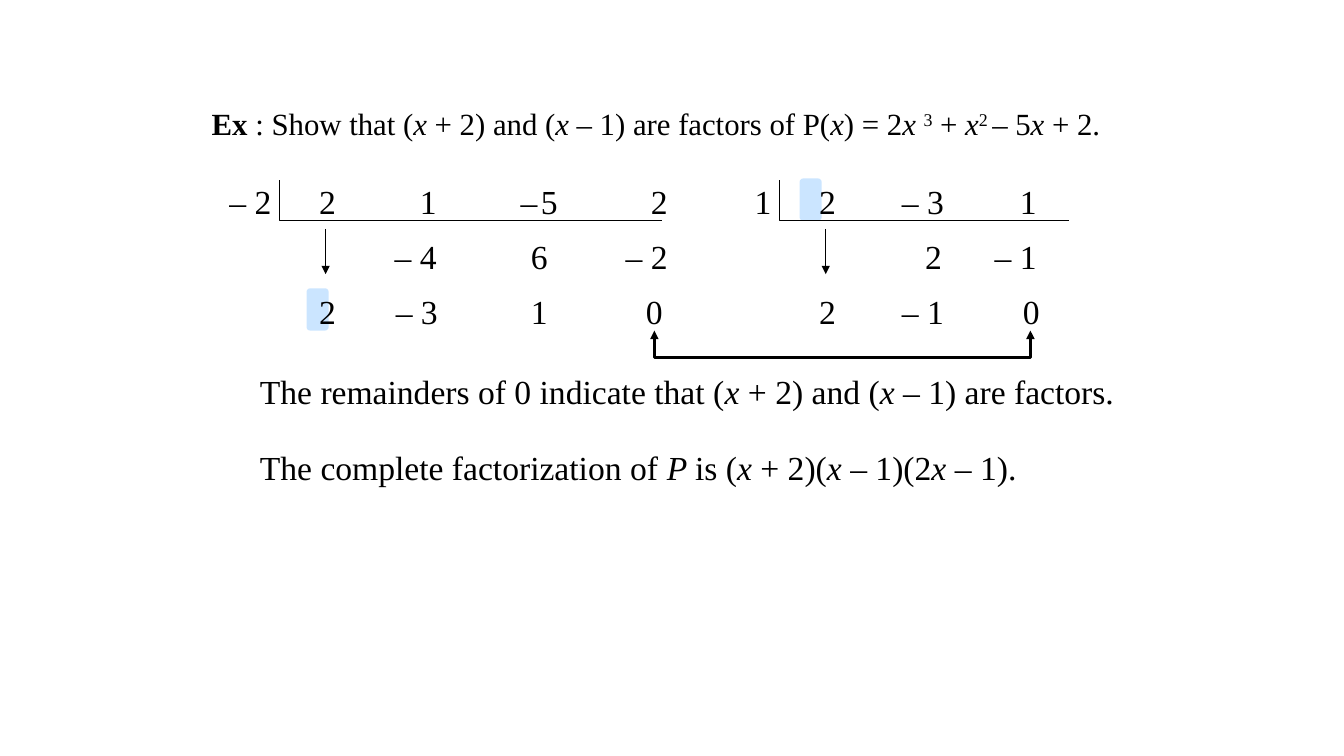
import pptx
import pptx.util
import pptx.dml.color
import pptx.enum.shapes
import pptx.enum.text
import pptx.oxml
import pptx.oxml.ns
from lxml import etree

Inches = pptx.util.Inches
Pt = pptx.util.Pt
ALIGN = pptx.enum.text.PP_ALIGN

QUESTION = [("Ex ", "bold"), (": Show that (", ""), ("x", "italic"), (" + 2) and (", ""),
            ("x", "italic"), (" – 1) are factors of P(", ""), ("x", "italic"), (") = 2", ""),
            ("x ", "italic"), ("3", "power"), (" + ", ""), ("x", "italic"), ("2 ", "power"),
            ("– 5", ""), ("x", "italic"), (" + 2.", "")]
CONCLUSIONS = [
    (3.55, [("The remainders of 0 indicate that (", ""), ("x", "italic"), (" + 2) and (", ""),
            ("x", "italic"), (" – 1) are factors.", "")]),
    (4.3, [("The complete factorization of ", ""), ("P ", "italic"), ("is (", ""),
           ("x", "italic"), (" + 2)(", ""), ("x", "italic"), (" – 1)(2", ""),
           ("x ", "italic"), ("– 1).", "")]),
]
MINUS_FIVE = [("–", ""), (" ", "thin"), ("5", "")]
DIVISIONS = [
    {"divisor": ("– 2", 2.69), "corner": 2.77, "rule_end": 6.57, "arrow": 3.23,
     "rows": [[("2", 3.33), ("1", 4.33), (MINUS_FIVE, 5.53), ("2", 6.62)],
              [("– 4", 4.33), ("6", 5.43), ("– 2", 6.62)],
              [("2", 3.33), ("– 3", 4.34), ("1", 5.43), ("0", 6.57)]]},
    {"divisor": ("1", 7.65), "corner": 7.73, "rule_end": 10.6, "arrow": 8.19,
     "rows": [[("2", 8.29), ("– 3", 9.36), ("1", 10.28)],
              [("2", 9.34), ("– 1", 10.28)],
              [("2", 8.29), ("– 1", 9.36), ("0", 10.31)]]},
]
HIGHLIGHTS = [(7.93, 1.77), (3.04, 2.86)]
REMAINDER_LINK = [(6.49, 3.28), (6.49, 3.55), (10.22, 3.55), (10.22, 3.28)]

THEME = {"font": "Times New Roman", "ink": "000000", "highlight": "99CCFF",
         "question": 22, "body": 24, "thin": 10, "line": 1, "link": 2}
ROW_TOP, ROW_STEP, LINE_HEIGHT = 1.67, 0.545, 0.54
NUMBER_WIDTH, INSET = 0.75, 0.1
BRACKET_TOP, BRACKET_BASE = 1.79, 2.19
ARROW_TOP, ARROW_TIP = 2.27, 2.72


def color(key):
    return pptx.dml.color.RGBColor.from_string(THEME[key])


def write(frame, pieces, size, align=ALIGN.LEFT):
    frame.word_wrap = True
    frame.auto_size = pptx.enum.text.MSO_AUTO_SIZE.NONE
    frame.vertical_anchor = pptx.enum.text.MSO_ANCHOR.TOP
    paragraph = frame.paragraphs[0]
    paragraph.alignment = align
    paragraph.line_spacing = 1.2
    paragraph.space_before = Pt(0)
    for text, style in pieces:
        run = paragraph.add_run()
        run.text = text
        font = run.font
        font.name = THEME["font"]
        font.size = Pt(THEME["thin"] if style == "thin" else size)
        font.color.rgb = color("ink")
        font.bold = style == "bold"
        font.italic = style == "italic"
        if style == "power":
            run._r.get_or_add_rPr().set("baseline", "30000")


def add_text(slide, left, top, width, pieces, align=ALIGN.LEFT):
    box = slide.shapes.add_textbox(Inches(left), Inches(top), Inches(width), Inches(LINE_HEIGHT))
    write(box.text_frame, pieces, THEME["body"], align)


def add_number(slide, number, right, row):
    pieces = [(number, "")] if isinstance(number, str) else number
    add_text(slide, right + INSET - NUMBER_WIDTH, ROW_TOP + row * ROW_STEP,
             NUMBER_WIDTH, pieces, ALIGN.RIGHT)


def style_line(shape, weight, arrowheads=()):
    shape.line.color.rgb = color("ink")
    shape.line.width = Pt(weight)
    for end in arrowheads:
        etree.SubElement(shape.line._get_or_add_ln(), pptx.oxml.ns.qn("a:" + end), type="triangle")


def add_path(slide, points, weight, arrowheads=()):
    corners = [(Inches(x), Inches(y)) for x, y in points]
    builder = slide.shapes.build_freeform(*corners[0])
    builder.add_line_segments(corners[1:], close=False)
    outline = builder.convert_to_shape()
    outline.shadow.inherit = False
    outline.fill.background()
    style_line(outline, weight, arrowheads)


def add_highlight(slide, left, top):
    mark = slide.shapes.add_shape(pptx.enum.shapes.MSO_SHAPE.ROUNDED_RECTANGLE,
                                  Inches(left), Inches(top), Inches(0.22), Inches(0.42))
    mark.shadow.inherit = False
    mark.line.fill.background()
    mark.fill.solid()
    mark.fill.fore_color.rgb = color("highlight")
    tint = mark._element.spPr.find(".//" + pptx.oxml.ns.qn("a:srgbClr"))
    etree.SubElement(tint, pptx.oxml.ns.qn("a:alpha"), val="50000")


def add_division(slide, division):
    corner, rule_end, x = division["corner"], division["rule_end"], division["arrow"]
    add_path(slide, [(corner, BRACKET_TOP), (corner, BRACKET_BASE), (rule_end, BRACKET_BASE)],
             THEME["line"])
    arrow = slide.shapes.add_connector(pptx.enum.shapes.MSO_CONNECTOR.STRAIGHT, Inches(x),
                                       Inches(ARROW_TOP), Inches(x), Inches(ARROW_TIP))
    style_line(arrow, THEME["line"], ["tailEnd"])
    etree.SubElement(arrow._element.spPr, pptx.oxml.ns.qn("a:effectLst"))
    add_number(slide, *division["divisor"], 0)
    for row, numbers in enumerate(division["rows"]):
        for number, right in numbers:
            add_number(slide, number, right, row)


def main():
    deck = pptx.Presentation()
    deck.slide_width, deck.slide_height = Inches(13.33), Inches(7.5)
    slide = deck.slides.add_slide(deck.slide_layouts[5])
    question = slide.shapes.title
    question.left, question.top = Inches(2), Inches(0.92)
    question.width, question.height = Inches(9.42), Inches(0.51)
    write(question.text_frame, QUESTION, THEME["question"])
    for left, top in HIGHLIGHTS:
        add_highlight(slide, left, top)
    for division in DIVISIONS:
        add_division(slide, division)
    add_path(slide, REMAINDER_LINK, THEME["link"], ["headEnd", "tailEnd"])
    for top, pieces in CONCLUSIONS:
        add_text(slide, 2.48, top, 8.83, pieces)
    deck.save("out.pptx")


if __name__ == "__main__":
    main()
